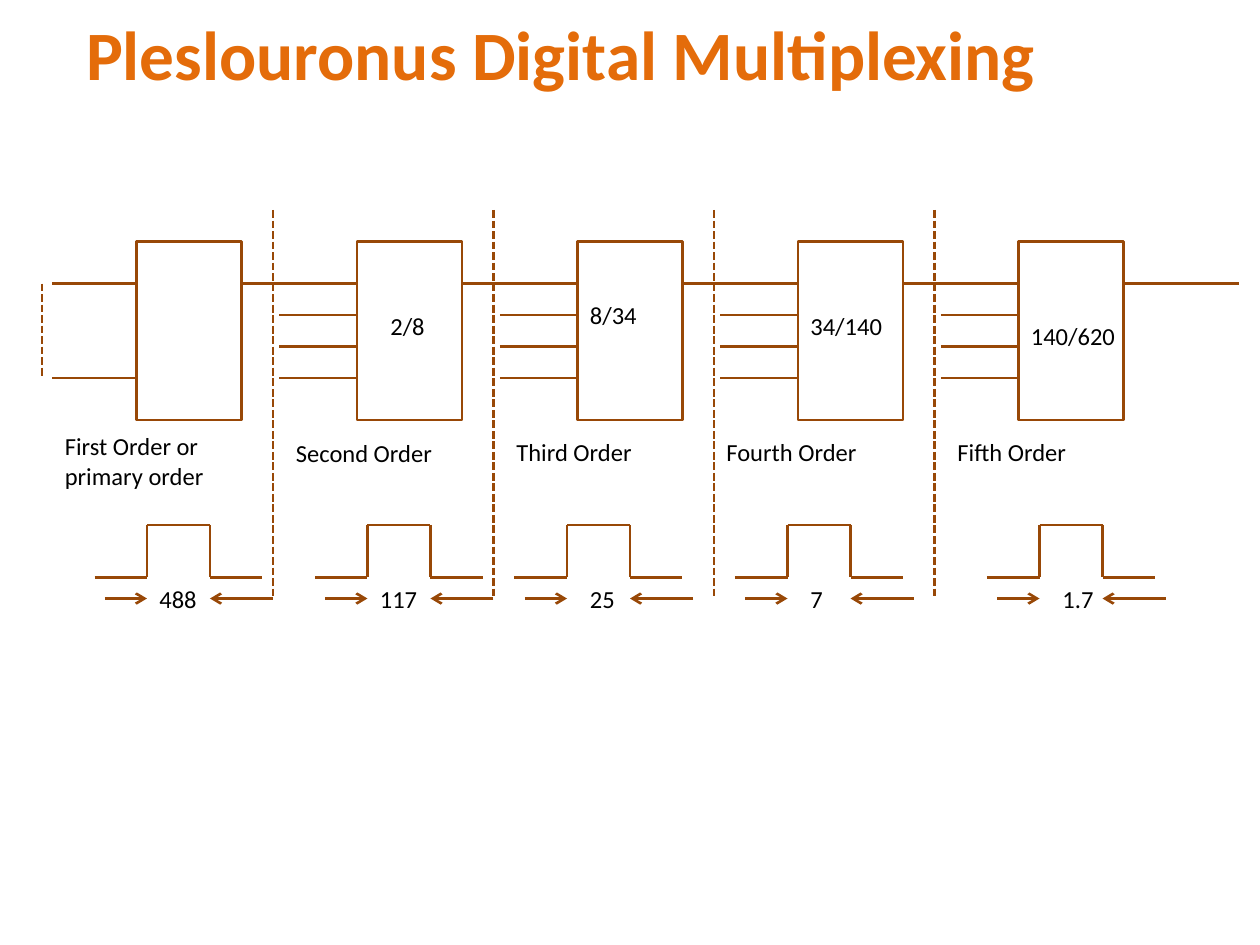
from lxml.etree import SubElement
from pptx import Presentation
from pptx.dml.color import RGBColor
from pptx.enum.dml import MSO_LINE
from pptx.enum.shapes import MSO_CONNECTOR, MSO_SHAPE
from pptx.enum.text import MSO_ANCHOR, PP_ALIGN
from pptx.oxml.ns import qn
from pptx.util import Inches, Pt

ORANGE = RGBColor(0xE4, 0x6C, 0x0A)
BROWN = RGBColor(0x98, 0x48, 0x07)
BLACK = RGBColor(0, 0, 0)

# The slide is a grid of 120 columns by 90 rows
deck = Presentation()
deck.slide_width, deck.slide_height = Inches(10), Inches(7.5)
CELL = deck.slide_width / 120
slide = deck.slides.add_slide(deck.slide_layouts[5])
shapes = slide.shapes


def write(text, col, row, wide, high, box=None, size=14, color=BLACK,
          bold=False, anchor=MSO_ANCHOR.TOP):
    place = [int(n * CELL) for n in (col, row, wide, high)]
    if box is None:
        box = shapes.add_textbox(*place)
    box.left, box.top, box.width, box.height = place
    frame = box.text_frame
    frame.word_wrap = True
    frame.vertical_anchor = anchor
    frame.text = text
    par = frame.paragraphs[0]
    par.alignment = PP_ALIGN.LEFT
    font = par.runs[0].font
    font.name, font.size, font.bold = "Calibri", Pt(size), bold
    font.color.rgb = color


def draw(x1, y1, x2, y2, dash=False, arrow=False):
    ends = [int(n * CELL) for n in (x1, y1, x2, y2)]
    wire = shapes.add_connector(MSO_CONNECTOR.STRAIGHT, *ends)
    wire.line.color.rgb = BROWN
    wire.line.width = Pt(1.5)
    if dash:
        wire.line.dash_style = MSO_LINE.SQUARE_DOT
    if arrow:
        SubElement(wire.line._get_or_add_ln(), qn("a:tailEnd"), type="arrow")
    SubElement(wire._element.spPr, qn("a:effectLst"))


# Title
write("Pleslouronus Digital Multiplexing", 7, 1, 108, 8, box=shapes.title,
      size=39.6, color=ORANGE, bold=True, anchor=MSO_ANCHOR.MIDDLE)

# Inputs of the first stage
draw(4, 27, 4, 36, dash=True)
for row in (27, 36):
    draw(5, row, 13, row)

# Stages: order label and its column and row, ratio and its column and row,
# pulse width and its column, left edge of the pulse
stages = [
    ("First Order or primary order", 5, 40.5, "", 0, 0, "488", 14, 14),
    ("Second Order", 27, 41.1, "2/8", 36, 29, "117", 35, 35),
    ("Third Order", 48, 41, "8/34", 55, 28, "25", 55, 54),
    ("Fourth Order", 68, 41, "34/140", 76, 29, "7", 76, 75),
    ("Fifth Order", 90, 41, "140/620", 97, 30, "1.7", 100, 99),
]
STEP = 21
for i, (order, ocol, orow, ratio, rcol, rrow, width, wcol, edge) in enumerate(stages):
    left = 13 + STEP * i

    # Multiplexer box with its output
    box = shapes.add_shape(MSO_SHAPE.RECTANGLE, *[
        int(n * CELL) for n in (left, 23, 10, 17)])
    box.shadow.inherit = False
    box.fill.background()
    box.line.color.rgb = BROWN
    box.line.width = Pt(1.5)
    draw(left + 10, 27, left + STEP, 27)

    # Divider and extra inputs ahead of each later stage
    if i > 0:
        draw(left - 8, 20, left - 8, 57, dash=True)
        for row in (30, 33, 36):
            draw(left - 7.4, row, left, row)
        write(ratio, rcol, rrow, 12, 4)

    # Pulse
    points = [(edge - 5, 55), (edge, 55), (edge, 50),
              (edge + 6, 50), (edge + 6, 55), (edge + 11, 55)]
    for start, end in zip(points, points[1:]):
        draw(*start, *end)

    # Pulse width between two arrows
    draw(edge - 4, 57, edge, 57, arrow=True)
    draw(edge + 12, 57, edge + 6, 57, arrow=True)
    write(width, wcol, 55, 8, 4)

    # Order label
    write(order, ocol, orow, 23 if i == 0 else 20, 7 if i == 0 else 4)

deck.save("out.pptx")
